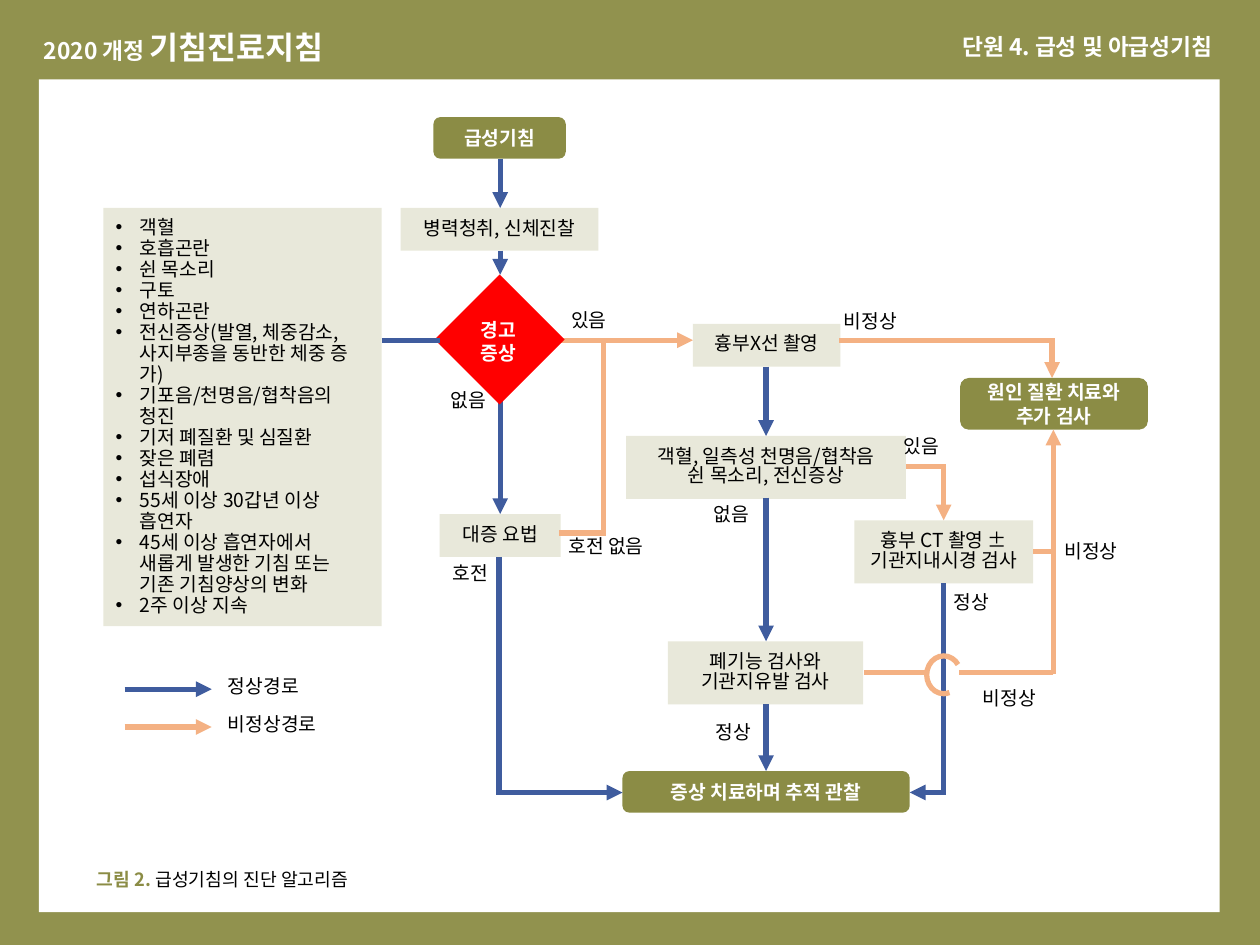
import dataclasses

import lxml.etree
import pptx
import pptx.dml.color
import pptx.enum.shapes
import pptx.enum.text
import pptx.oxml.ns
import pptx.util

SHAPE = pptx.enum.shapes.MSO_SHAPE
CONNECTOR = pptx.enum.shapes.MSO_CONNECTOR
ALIGN = pptx.enum.text.PP_ALIGN
ANCHOR = pptx.enum.text.MSO_ANCHOR
Pt = pptx.util.Pt
qn = pptx.oxml.ns.qn


@dataclasses.dataclass(frozen=True)
class Theme:
    font: str = "Noto Sans CJK KR"
    frame: str = "91924E"
    olive: str = "8B8C45"
    pale: str = "E8E8DA"
    alarm: str = "FF0000"
    normal: str = "3F5C9E"
    abnormal: str = "F4B183"
    white: str = "FFFFFF"
    black: str = "000000"
    body: int = 11
    header: int = 13
    title: int = 18
    line: int = 3


class Flowchart:
    """Draws on a grid of 100 columns by 75 rows."""

    def __init__(self, presentation, theme):
        self.theme = theme
        self.slide = presentation.slides.add_slide(presentation.slide_layouts[6])
        self.shapes = self.slide.shapes
        self.column = presentation.slide_width / 100
        self.row = presentation.slide_height / 75
        self.paint(self.slide.background.fill, theme.frame)

    def grid(self, *values):
        return [round(value * (self.row if index % 2 else self.column))
                for index, value in enumerate(values)]

    def color(self, code):
        return pptx.dml.color.RGBColor.from_string(code)

    def paint(self, fill, code):
        fill.solid()
        fill.fore_color.rgb = self.color(code)

    def add_run(self, paragraph, text, color, size=None, bold=False, raised=False):
        run = paragraph.add_run()
        run.text = text
        values = {"name": self.theme.font, "size": Pt(size or self.theme.body), "bold": bold}
        for name, value in values.items():
            setattr(run.font, name, value)
        run.font.color.rgb = self.color(color)
        properties = run._r.get_or_add_rPr()
        lxml.etree.SubElement(properties, qn("a:ea")).set("typeface", self.theme.font)
        if raised:
            properties.set("baseline", "30000")

    def add_lines(self, shape, lines, color, align=ALIGN.CENTER, spacing=None, bold=False,
                  bullets=False, anchor=ANCHOR.MIDDLE, wrap=True):
        frame = shape.text_frame
        for name, value in {"word_wrap": wrap, "vertical_anchor": anchor}.items():
            setattr(frame, name, value)
        for index, line in enumerate(lines):
            paragraph = frame.add_paragraph() if index else frame.paragraphs[0]
            paragraph.alignment = align
            if spacing:
                paragraph.line_spacing = Pt(spacing)
            if bullets:
                properties = paragraph._p.get_or_add_pPr()
                indent = pptx.util.Inches(0.19)
                properties.set("marL", str(indent))
                properties.set("indent", str(-indent))
                lxml.etree.SubElement(properties, qn("a:buFont")).set("typeface", "Arial")
                lxml.etree.SubElement(properties, qn("a:buChar")).set("char", "•")
            self.add_run(paragraph, line, color, bold=bold)

    def shape(self, kind, place, fill):
        shape = self.shapes.add_shape(kind, *self.grid(*place))
        shape.shadow.inherit = False
        shape.line.fill.background()
        self.paint(shape.fill, fill)
        return shape

    def step(self, place, *lines):
        box = self.shape(SHAPE.RECTANGLE, place, self.theme.pale)
        self.add_lines(box, lines, self.theme.black, spacing=11)

    def bullet_box(self, place, lines):
        box = self.shape(SHAPE.RECTANGLE, place, self.theme.pale)
        self.add_lines(box, lines, self.theme.black, ALIGN.LEFT, 12, bullets=True)

    def endpoint(self, place, *lines):
        box = self.shape(SHAPE.ROUNDED_RECTANGLE, place, self.theme.olive)
        self.add_lines(box, lines, self.theme.white, bold=True)

    def decision(self, place, text_place, *lines):
        self.shape(SHAPE.RECTANGLE, place, self.theme.alarm).rotation = 45
        box = self.shapes.add_textbox(*self.grid(*text_place))
        self.add_lines(box, lines, self.theme.white, bold=True, anchor=ANCHOR.TOP, wrap=False)

    def label(self, left, top, width, text, align=ALIGN.CENTER):
        box = self.shapes.add_textbox(*self.grid(left, top, width, 3.4))
        self.add_lines(box, [text], self.theme.black, align, 11)

    def rich_text(self, place, runs, align=ALIGN.LEFT, wrap=True):
        frame = self.shapes.add_textbox(*self.grid(*place)).text_frame
        frame.word_wrap = wrap
        frame.paragraphs[0].alignment = align
        for values in runs:
            self.add_run(frame.paragraphs[0], **values)

    def stroke(self, shape, color, arrow):
        shape.line.width = Pt(self.theme.line)
        self.paint(shape.line.fill, color)
        line = shape.line._get_or_add_ln()
        lxml.etree.SubElement(line, qn("a:miter")).set("lim", "800000")
        if arrow:
            lxml.etree.SubElement(line, qn("a:tailEnd")).set("type", "triangle")

    def connect(self, kind, ends, color, arrow):
        connector = self.shapes.add_connector(kind, *self.grid(*ends))
        self.stroke(connector, color, arrow)
        lxml.etree.SubElement(connector._element.spPr, qn("a:effectLst"))
        return connector._element.spPr

    def line(self, ends, color, arrow=True):
        self.connect(CONNECTOR.STRAIGHT, ends, color, arrow)

    def elbow(self, start, end, color, down_first=False):
        (x1, y1), (x2, y2) = start, end
        ends = (x1, y1, x2, y2)
        if down_first:
            # A turned connector keeps its centre and swaps width and height
            middle_x, middle_y = (x1 + x2) / 2, (y1 + y2) / 2
            half_w, half_h = abs(y2 - y1) / 2, abs(x2 - x1) / 2
            ends = (middle_x - half_w, middle_y - half_h, middle_x + half_w, middle_y + half_h)
        properties = self.connect(CONNECTOR.ELBOW, ends, color, True)
        properties.find(qn("a:prstGeom")).set("prst", "bentConnector2")
        if down_first:
            frame = properties.find(qn("a:xfrm"))
            frame.set("rot", str((270 if x2 > x1 else 90) * 60000))
            if x2 > x1:
                frame.set("flipH", "1")

    def polyline(self, points, color, arrow=False):
        start, *others = [self.grid(*point) for point in points]
        builder = self.shapes.build_freeform(*start)
        builder.add_line_segments(others, close=False)
        shape = builder.convert_to_shape()
        shape.shadow.inherit = False
        shape.fill.background()
        self.stroke(shape, color, arrow)

    def bridge(self, place, angles, color):
        arc = self.shapes.add_shape(SHAPE.ARC, *self.grid(*place))
        arc.shadow.inherit = False
        arc.fill.background()
        arc.rotation = 270
        for index, angle in enumerate(angles):
            arc.adjustments[index] = angle * 0.6
        self.stroke(arc, color, False)


def main():
    presentation = pptx.Presentation()
    presentation.slide_width = pptx.util.Inches(10)
    presentation.slide_height = pptx.util.Inches(7.5)
    theme = Theme()
    chart = Flowchart(presentation, theme)
    normal, abnormal = theme.normal, theme.abnormal
    history_x, imaging_x, scan_x, cause_x = 39.7, 60.8, 74.9, 83.6

    # Page frame, header and caption
    chart.shape(SHAPE.RECTANGLE, (3.1, 6.3, 93.7, 66.1), theme.white)
    heading = {"color": theme.white, "size": theme.header, "bold": True}
    chart.rich_text((2.5, 1.7, 48.4, 4), [
        {**heading, "text": "2020 개정 "},
        {**heading, "text": "기침진료지침", "size": theme.title}])
    chart.rich_text((48.8, 2.1, 48.4, 3.2),
                    [{**heading, "text": "단원 4. 급성 및 아급성기침"}], ALIGN.RIGHT)
    caption = {"size": theme.title, "raised": True}
    chart.rich_text((6.7, 68.1, 27.7, 3), [
        {**caption, "text": "그림 2. ", "color": theme.olive, "bold": True},
        {**caption, "text": "급성기침의 진단 알고리즘", "color": theme.black}], wrap=False)

    # Paths that leave the decision
    chart.line((44.5, 27, 55, 27), abnormal)
    chart.line((history_x, 31.8, history_x, 40.8), normal)

    # Warning signs
    chart.bullet_box((8.2, 16.5, 22.1, 33.2), [
        "객혈", "호흡곤란", "쉰 목소리", "구토", "연하곤란",
        "전신증상(발열, 체중감소, 사지부종을 동반한 체중 증가)",
        "기포음/천명음/협착음의 청진", "기저 폐질환 및 심질환", "잦은 폐렴", "섭식장애",
        "55세 이상 30갑년 이상 흡연자",
        "45세 이상 흡연자에서 새롭게 발생한 기침 또는 기존 기침양상의 변화",
        "2주 이상 지속"])

    # Steps, decision and endpoints
    chart.step((31.8, 16.5, 15.7, 3.4), "병력청취, 신체진찰")
    chart.step((34.9, 40.8, 9.6, 3.4), "대증 요법")
    chart.step((55, 25.7, 11.7, 3.4), "흉부X선 촬영")
    chart.step((49.7, 34.6, 22.2, 5), "객혈, 일측성 천명음/협착음", "쉰 목소리, 전신증상")
    chart.step((53, 50.9, 15.5, 5), "폐기능 검사와", "기관지유발 검사")
    chart.step((67.8, 41.3, 14.2, 5), "흉부 CT 촬영 ±", "기관지내시경 검사")
    chart.endpoint((34.4, 9.3, 10.5, 3.3), "급성기침")
    chart.endpoint((76.2, 30, 14.9, 4.1), "원인 질환 치료와", "추가 검사")
    chart.endpoint((49.4, 61.2, 22.8, 3.3), "증상 치료하며 추적 관찰")
    chart.decision((36, 23.3, 7.3, 7.3), (37, 24.8, 5.1, 4.7), "경고", "증상")

    # Branch labels
    for left, top, width, text in [
            (44.1, 23.8, 5.3, "있음"), (34.5, 30.2, 5.3, "없음"), (34.7, 43.9, 5.3, "호전"),
            (43.6, 41.8, 9, "호전 없음"), (64.6, 23.9, 9, "비정상"), (82.1, 42.2, 9, "비정상"),
            (75.6, 53.8, 9, "비정상"), (70.5, 33.8, 5.3, "있음"), (55.4, 39.2, 5.3, "없음"),
            (72.6, 46.2, 9, "정상"), (53.7, 56.5, 9, "정상")]:
        chart.label(left, top, width, text)

    # Normal paths
    for x, top, bottom in [(history_x, 12.6, 16.5), (history_x, 19.9, 21.8),
                           (imaging_x, 29.1, 34.6), (imaging_x, 39.5, 50.9),
                           (imaging_x, 55.9, 61.2)]:
        chart.line((x, top, x, bottom), normal)
    chart.elbow((39.6, 44.2), (49.4, 62.9), normal, down_first=True)
    chart.elbow((scan_x, 46.3), (72.2, 62.9), normal, down_first=True)
    chart.line((30.3, 27, 34.9, 27), normal, arrow=False)

    # Abnormal paths, with a bridge over the normal one
    chart.line((cause_x, 44.2, cause_x, 34.1), abnormal)
    chart.polyline([(66.6, 27), (83.5, 27), (83.5, 30)], abnormal, arrow=True)
    chart.polyline([(47.9, 27.2), (47.9, 42.3), (44.4, 42.3)], abnormal)
    chart.elbow((71.9, 37), (scan_x, 41.3), abnormal)
    chart.bridge((73.4, 52.2, 3, 2.7), (162, 54.56), abnormal)
    for ends in [(73.7, 53.4, 68.6, 53.4), (cause_x, 53.4, 76.1, 53.4),
                 (cause_x, 53.5, cause_x, 43.9), (82, 43.8, cause_x, 43.8)]:
        chart.line(ends, abnormal, arrow=False)

    # Legend
    for y, color, text in [(54.7, normal, "정상경로"), (57.7, abnormal, "비정상경로")]:
        chart.line((9.9, y, 16.8, y), color)
        chart.label(17.1, y - 1.8, 10, text, ALIGN.LEFT)

    presentation.save("out.pptx")


if __name__ == "__main__":
    main()
